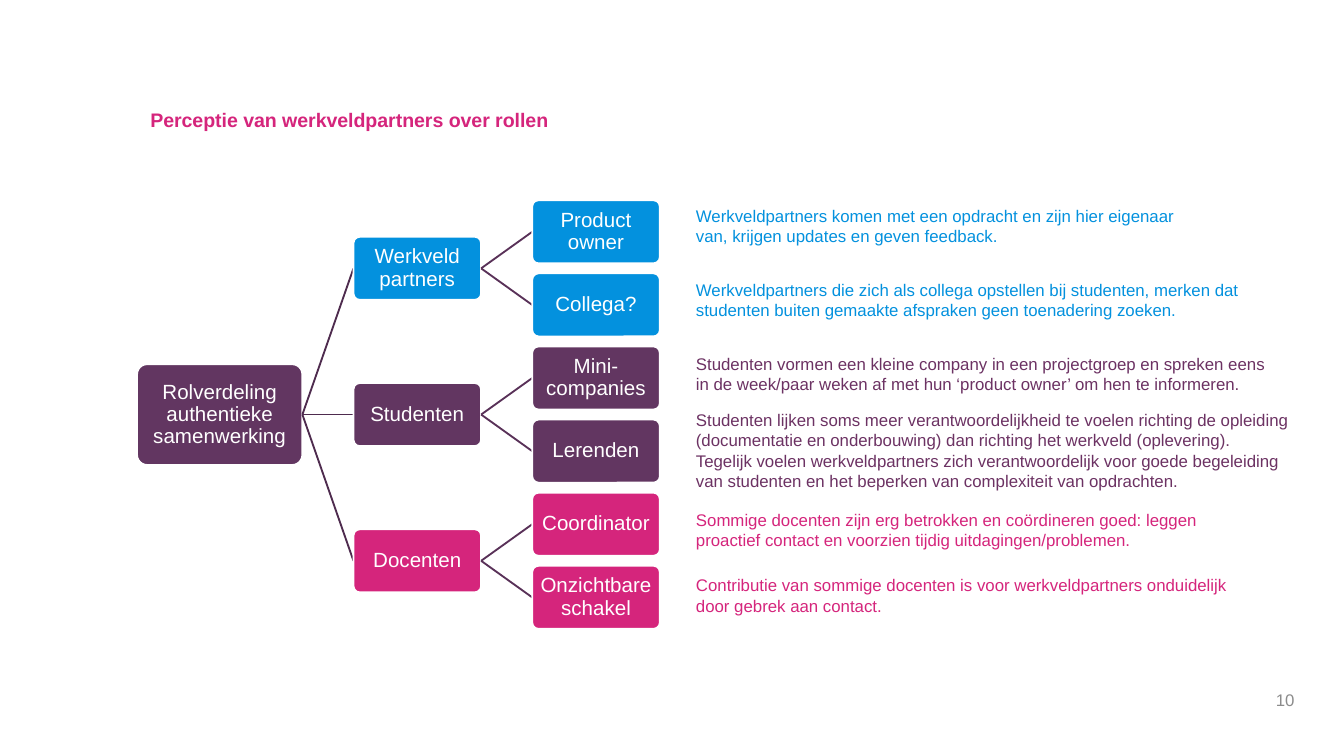
from lxml.etree import SubElement
from pptx import Presentation
from pptx.dml.color import RGBColor
from pptx.enum.shapes import MSO_CONNECTOR as Line, MSO_SHAPE as Shape
from pptx.enum.text import MSO_ANCHOR as Anchor, PP_ALIGN as Align
from pptx.oxml.ns import qn
from pptx.util import Inches, Pt

WHITE = RGBColor(0xFF, 0xFF, 0xFF)
GREY = RGBColor(0x8C, 0x8C, 0x8C)
BLUE = RGBColor(0x03, 0x91, 0xDE)
PURPLE = RGBColor(0x62, 0x36, 0x61)
PLUM = RGBColor(0x6C, 0x32, 0x63)
PINK = RGBColor(0xD5, 0x25, 0x7C)
TRUNK = RGBColor(0x4E, 0x2B, 0x4E)
TWIG = RGBColor(0x59, 0x31, 0x58)

# Grid in inches: three tree columns, a column of notes, six role rows
ROOT_X, GROUP_X, ROLE_X, NOTE_X = 1.02, 2.63, 3.96, 5.08
ROOT_W, ROOT_H = 1.23, 0.75
BOX_W, BOX_H = 0.95, 0.47
FIRST_ROW = 1.49 + BOX_H / 2
ROW = 2.72 / 5
MIDDLE = FIRST_ROW + 2.5 * ROW

# Group, box colour, note colour, then (role, note paragraphs, note top, note width)
GROUPS = [
    ("Werkveld partners", BLUE, BLUE, [
        ("Product owner",
         ["Werkveldpartners komen met een opdracht en zijn hier eigenaar van, "
          "krijgen updates en geven feedback."], 1.48, 3.97),
        ("Collega?",
         ["Werkveldpartners die zich als collega opstellen bij studenten, merken dat "
          "studenten buiten gemaakte afspraken geen toenadering zoeken."], 2.03, 4.47)]),
    ("Studenten", PURPLE, PLUM, [
        ("Mini-companies",
         ["Studenten vormen een kleine company in een projectgroep en spreken eens in de "
          "week/paar weken af met hun ‘product owner’ om hen te informeren."], 2.58, 4.47),
        ("Lerenden",
         ["Studenten lijken soms meer verantwoordelijkheid te voelen richting de opleiding "
          "(documentatie en onderbouwing) dan richting het werkveld (oplevering).",
          "Tegelijk voelen werkveldpartners zich verantwoordelijk voor goede begeleiding "
          "van studenten en het beperken van complexiteit van opdrachten."], 3.0, 4.64)]),
    ("Docenten", PINK, PINK, [
        ("Coordinator",
         ["Sommige docenten zijn erg betrokken en coördineren goed: leggen proactief "
          "contact en voorzien tijdig uitdagingen/problemen."], 3.74, 4.38),
        ("Onzichtbare schakel",
         ["Contributie van sommige docenten is voor werkveldpartners onduidelijk door "
          "gebrek aan contact."], 4.23, 4.38)]),
]

# Widescreen slide, 16:9
deck = Presentation()
deck.slide_width, deck.slide_height = Inches(10), Inches(10 * 9 / 16)
slide = deck.slides.add_slide(deck.slide_layouts[6])
shapes = slide.shapes


def write(holder, paragraphs, font, layout=None, frame=None):
    text = holder.text_frame
    for name, value in {"word_wrap": True, **(frame or {})}.items():
        setattr(text, name, value)
    text.text = "\n".join(paragraphs)
    for paragraph in text.paragraphs:
        for name, value in (layout or {}).items():
            setattr(paragraph, name, value)
        for run in paragraph.runs:
            run.font.color.rgb = font["color"]
            run.font.name, run.font.size = "Arial", Pt(font["size"])
            run.font.bold = font.get("bold", False)


def add_node(label, left, center, width, height, color, start=None, branch=None):
    # The branch lies beneath the box it leads to
    if start:
        twig = shapes.add_connector(Line.STRAIGHT, *map(Inches, (*start, left, center)))
        twig.line.color.rgb, twig.line.width = branch, Pt(1)
        SubElement(twig._element.spPr, qn("a:effectLst"))
    box = shapes.add_shape(Shape.ROUNDED_RECTANGLE,
                           *map(Inches, (left, center - height / 2, width, height)))
    box.adjustments[0] = 0.1
    box.shadow.inherit = False
    box.fill.solid()
    box.fill.fore_color.rgb = color
    box.line.color.rgb, box.line.width = WHITE, Pt(1)
    margins = {f"margin_{side}": Inches(0.02) for side in ("left", "right", "top", "bottom")}
    write(box, [label], {"size": 11, "color": WHITE},
          {"alignment": Align.CENTER, "line_spacing": 0.9},
          {"vertical_anchor": Anchor.MIDDLE, **margins})
    return left + width, center


# Title and page number
title = shapes.add_textbox(*map(Inches, (ROOT_X, 0.67, 7.79, 0.33)))
write(title, ["Perceptie van werkveldpartners over rollen"],
      {"size": 10.5, "color": PINK, "bold": True}, {"line_spacing": 1.5})
page = shapes.add_textbox(*map(Inches, (8.82, 5.06, 0.91, 0.3)))
write(page, ["10"], {"size": 9, "color": GREY}, {"alignment": Align.RIGHT},
      {"vertical_anchor": Anchor.MIDDLE})

# Tree of roles, with a note beside each role
root = add_node("Rolverdeling authentieke samenwerking", ROOT_X, MIDDLE,
                ROOT_W, ROOT_H, PURPLE)
for g, (group, color, note_color, roles) in enumerate(GROUPS):
    group_y = FIRST_ROW + (2 * g + 0.5) * ROW
    fork = add_node(group, GROUP_X, group_y, BOX_W, BOX_H, color, root, TRUNK)
    for r, (role, paragraphs, note_top, note_width) in enumerate(roles):
        role_y = FIRST_ROW + (2 * g + r) * ROW
        add_node(role, ROLE_X, role_y, BOX_W, BOX_H, color, fork, TWIG)
        note_height = 0.4 if len(paragraphs) == 1 else 0.71
        note = shapes.add_textbox(*map(Inches, (NOTE_X, note_top, note_width, note_height)))
        write(note, paragraphs, {"size": 9, "color": note_color})

deck.save("out.pptx")
